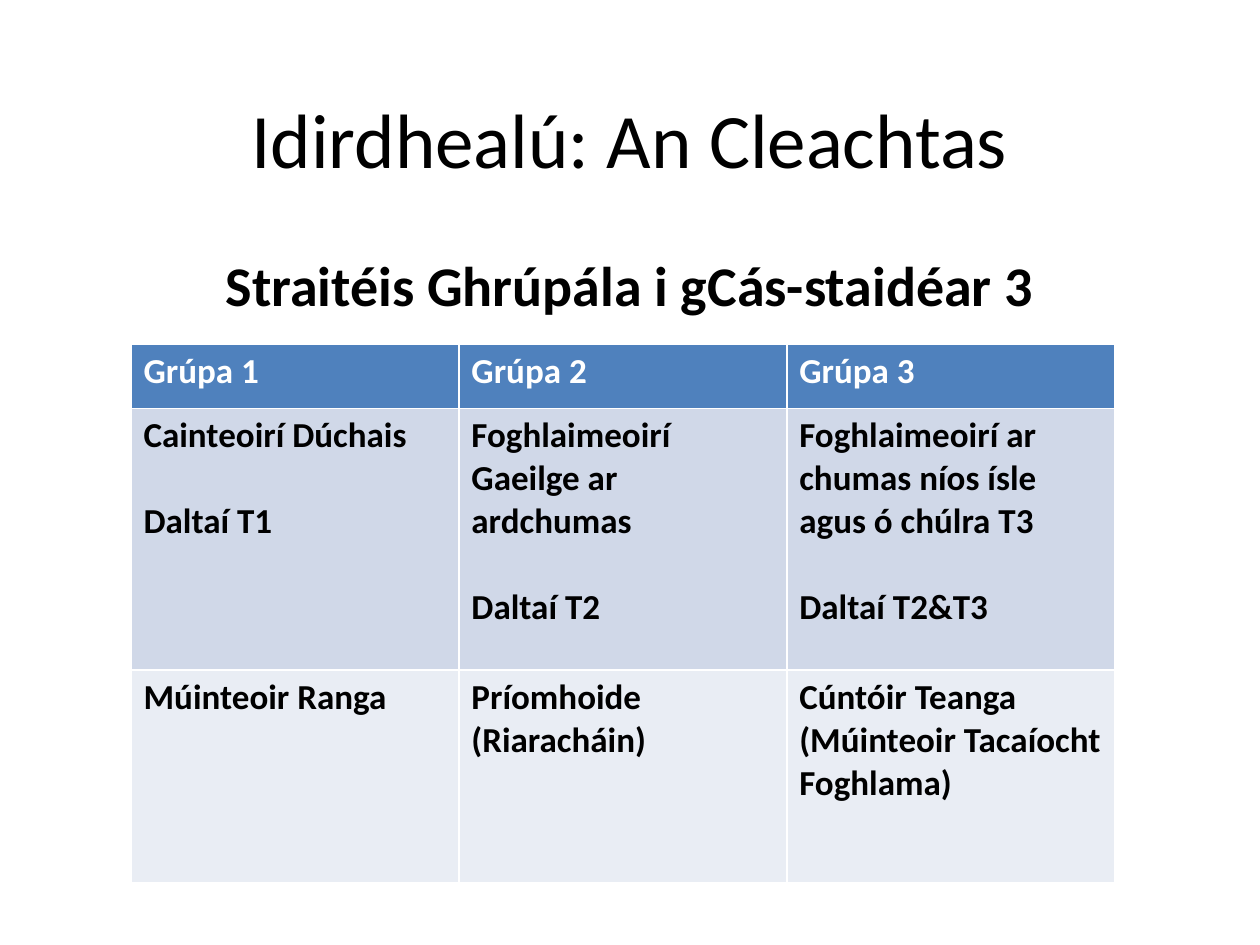
from dataclasses import dataclass

from pptx import Presentation
from pptx.dml.color import RGBColor as Rgb
from pptx.enum.text import MSO_ANCHOR as Anchor, PP_ALIGN as Align
from pptx.slide import Slide
from pptx.util import Cm, Pt

HUES = {"text": "000000", "white": "FFFFFF", "head": "4F81BD",
        "dark": "D0D8E8", "light": "E9EDF4"}
FACE = "Calibri"
GAP = Pt(24.4)


@dataclass
class Label:
    text: str
    top: float
    high: float
    size: int
    bold: bool
    anchor: Anchor


@dataclass
class Band:
    high: float
    fill: str
    ink: str
    cells: list[list[str]]


LABELS = [
    Label("Idirdhealú: An Cleachtas", 1.19, 3.18, 44, False, Anchor.MIDDLE),
    Label("Straitéis Ghrúpála i gCás-staidéar 3", 4.93, 11.73, 32, True, Anchor.TOP),
]
BANDS = [
    Band(1.3, "head", "white", [["Grúpa 1"], ["Grúpa 2"], ["Grúpa 3"]]),
    Band(5.28, "dark", "text", [
        ["Cainteoirí Dúchais", "Daltaí T1"],
        ["Foghlaimeoirí Gaeilge ar ardchumas", "Daltaí T2"],
        ["Foghlaimeoirí ar chumas níos ísle agus ó chúlra T3", "Daltaí T2&T3"],
    ]),
    Band(4.29, "light", "text", [
        ["Múinteoir Ranga"],
        ["Príomhoide (Riaracháin)"],
        ["Cúntóir Teanga (Múinteoir Tacaíocht Foghlama)"],
    ]),
]


def style(para, size: int, bold: bool, ink: str) -> None:
    """Set the font of a paragraph."""
    font = para.font
    font.name, font.size, font.bold = FACE, Pt(size), bold
    font.color.rgb = Rgb.from_string(HUES[ink])


def add_label(slide: Slide, label: Label) -> None:
    """Add a centred line of text."""
    box = slide.shapes.add_textbox(Cm(1.27), Cm(label.top), Cm(22.86), Cm(label.high))
    frame = box.text_frame
    frame.word_wrap = True
    frame.vertical_anchor = label.anchor
    para = frame.paragraphs[0]
    para.text = label.text
    para.alignment = Align.CENTER
    style(para, label.size, label.bold, "text")


def fill_cell(cell, lines: list[str], band: Band) -> None:
    """Colour a cell and write its lines a blank line apart."""
    cell.fill.solid()
    cell.fill.fore_color.rgb = Rgb.from_string(HUES[band.fill])
    cell.text = "\n".join(lines)
    for i, para in enumerate(cell.text_frame.paragraphs):
        if i:
            para.space_before = GAP
        style(para, 20, True, band.ink)


def add_grid(slide: Slide, bands: list[Band]) -> None:
    """Add the table of groups."""
    count = len(bands[0].cells)
    high = sum(band.high for band in bands)
    grid = slide.shapes.add_table(len(bands), count, Cm(2.64), Cm(6.93),
                                  Cm(6.61 * count), Cm(high)).table
    for row, band in zip(grid.rows, bands):
        row.height = Cm(band.high)
        for cell, lines in zip(row.cells, band.cells):
            fill_cell(cell, lines, band)


def main() -> None:
    """Build and save the slide."""
    deck = Presentation()
    deck.slide_width, deck.slide_height = Cm(25.4), Cm(19.05)
    slide = deck.slides.add_slide(deck.slide_layouts[6])
    for label in LABELS:
        add_label(slide, label)
    add_grid(slide, BANDS)
    deck.save("out.pptx")


if __name__ == "__main__":
    main()
